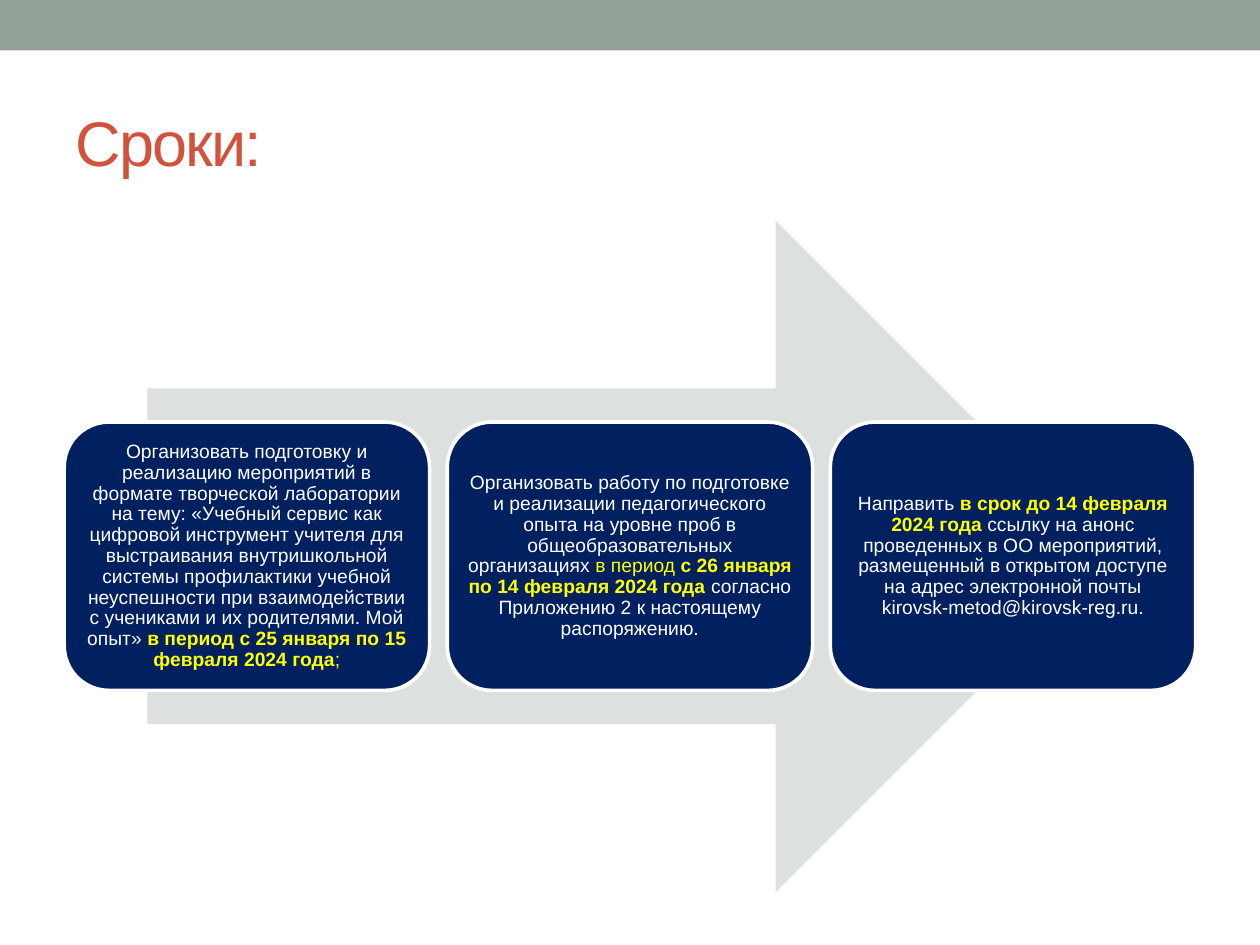
"""Build the slide with the deadlines of three steps along an arrow."""
import pptx
import pptx.dml.color
import pptx.enum.shapes
import pptx.enum.text
import pptx.util

Inches = pptx.util.Inches
Pt = pptx.util.Pt
Shapes = pptx.enum.shapes.MSO_SHAPE
MIDDLE = pptx.enum.text.MSO_ANCHOR.MIDDLE
WHITE = "FFFFFF"
YELLOW = "FFFF00"


def color(hex_value):
    return pptx.dml.color.RGBColor.from_string(hex_value)


def add_block(slide, kind, left, top, width, height, fill):
    block = slide.shapes.add_shape(kind, Inches(left), Inches(top), Inches(width), Inches(height))
    block.shadow.inherit = False
    block.fill.solid()
    block.fill.fore_color.rgb = color(fill)
    block.line.fill.background()
    return block


deck = pptx.Presentation()
deck.slide_width = Inches(10)
deck.slide_height = Inches(7.5)
slide = deck.slides.add_slide(deck.slide_layouts[6])

add_block(slide, Shapes.RECTANGLE, 0, 0, 10, 0.4, "93A299")

title = slide.shapes.add_textbox(Inches(0.5), Inches(0.58), Inches(9), Inches(1.08)).text_frame
title.word_wrap = True
title.vertical_anchor = MIDDLE
heading = title.paragraphs[0]
heading_run = heading.add_run()
heading_run.text = "Сроки:"
heading_run.font._element.set("spc", "-100")
heading.font.name = "Arial"
heading.font.size = Pt(36)
heading.font.color.rgb = color("D2533C")

add_block(slide, Shapes.RIGHT_ARROW, 1.17, 1.75, 7.65, 5.33, "DCE0DE")

steps = [
    [
        ("Организовать подготовку и реализацию мероприятий в формате творческой лаборатории "
         "на тему: «Учебный сервис как цифровой инструмент учителя для выстраивания "
         "внутришкольной системы профилактики учебной неуспешности при взаимодействии "
         "с учениками и их родителями. Мой опыт» ", WHITE, False),
        ("в период с 25 января по 15 февраля 2024 года", YELLOW, True),
        (";", YELLOW, False),
    ],
    [
        ("Организовать работу по подготовке и реализации педагогического опыта на уровне "
         "проб в общеобразовательных организациях ", WHITE, False),
        ("в период ", YELLOW, False),
        ("с 26 января по 14 февраля 2024 года ", YELLOW, True),
        ("согласно Приложению 2 к настоящему распоряжению.", WHITE, False),
    ],
    [
        ("Направить ", WHITE, False),
        ("в срок до 14 февраля 2024 года ", YELLOW, True),
        ("ссылку на анонс проведенных в ОО мероприятий, размещенный в открытом доступе "
         "на адрес электронной почты kirovsk-metod@kirovsk-reg.ru.", WHITE, False),
    ],
]

for index, phrases in enumerate(steps):
    step = add_block(slide, Shapes.ROUNDED_RECTANGLE, 0.51 + 3.04 * index, 3.35, 2.9, 2.13, "002060")
    step.line.color.rgb = color(WHITE)
    step.line.width = Pt(2.08)
    frame = step.text_frame
    frame.word_wrap = True
    frame.vertical_anchor = MIDDLE
    frame.margin_left = frame.margin_right = Inches(0.05)
    frame.margin_top = frame.margin_bottom = Inches(0.05)
    task = frame.paragraphs[0]
    task.alignment = pptx.enum.text.PP_ALIGN.CENTER
    task.line_spacing = 0.9
    task.font.name = "Arial"
    task.font.size = Pt(11)
    for wording, tint, bold in phrases:
        phrase = task.add_run()
        phrase.text = wording
        phrase.font.color.rgb = color(tint)
        phrase.font.bold = bold

deck.save("out.pptx")
